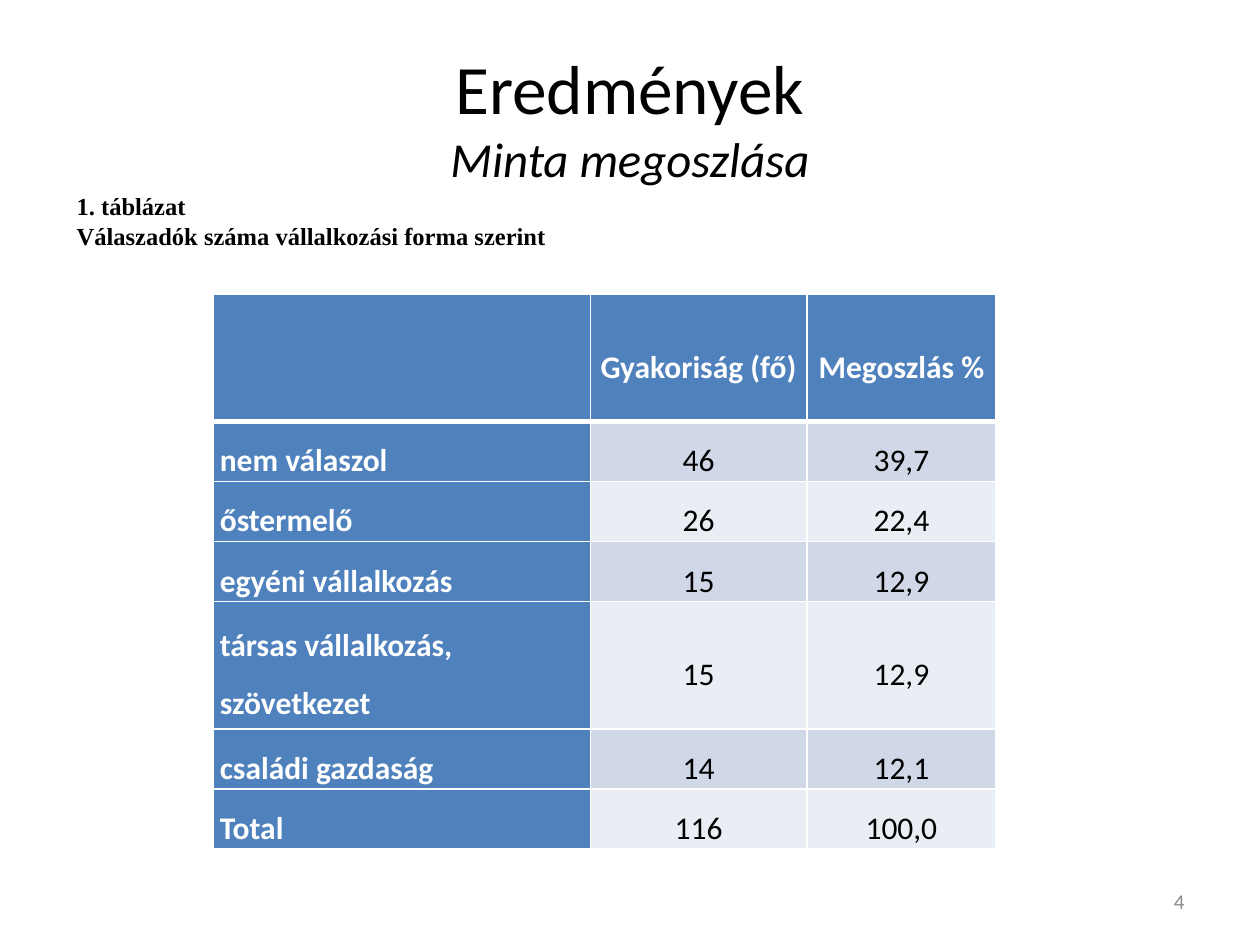
from lxml.etree import SubElement
from pptx import Presentation
from pptx.dml.color import RGBColor
from pptx.enum.text import MSO_ANCHOR, PP_ALIGN
from pptx.oxml.ns import qn
from pptx.util import Inches, Pt

WIDTH, HEIGHT = 10, 7.5
COLUMNS, ROWS = 100, 75
BLUE, BAND_DARK, BAND_LIGHT = "4F81BD", "D0D8E8", "E9EDF4"
WHITE, BLACK, GREY = "FFFFFF", "000000", "8C8C8C"


def color(hex_value):
    return RGBColor.from_string(hex_value)


def across(columns):
    return Inches(columns * WIDTH / COLUMNS)


def down(rows):
    return Inches(rows * HEIGHT / ROWS)


class SlideBuilder:
    """Holds the style and the slide; lengths are grid columns and rows."""

    font = "Calibri"

    def __init__(self, slide):
        self.slide = slide

    def style_run(self, run, size, ink, bold=False, italic=False, font=None):
        run.font.name = font or self.font
        run.font.size = Pt(size)
        run.font.bold = bold
        run.font.italic = italic
        run.font.color.rgb = color(ink)

    def text(self, place, content, styles, align=PP_ALIGN.LEFT,
             anchor=MSO_ANCHOR.MIDDLE, wrap=True):
        """Adds a text box; styles are given to the runs in order."""
        left, top, width, height = place
        frame = self.slide.shapes.add_textbox(
            across(left), down(top), across(width), down(height)).text_frame
        frame.word_wrap = wrap
        frame.vertical_anchor = anchor
        frame.text = content
        runs = []
        for paragraph in frame.paragraphs:
            paragraph.alignment = align
            runs.extend(paragraph.runs)
        for run, style in zip(runs, styles):
            self.style_run(run, **style)

    def border(self, cell, side, points):
        line = SubElement(cell._tc.get_or_add_tcPr(), qn(f"a:ln{side}"),
                          w=str(Pt(points)))
        fill = SubElement(line, qn("a:solidFill"))
        SubElement(fill, qn("a:srgbClr"), val=WHITE)

    def cell(self, cell, content, row, column):
        heading = row == 0 or column == 0
        # Borders come before the fill in the cell properties
        for side in "LRTB":
            thick = (row == 0 and side == "B") or (row == 1 and side == "T")
            self.border(cell, side, 3 if thick else 1)
        cell.fill.solid()
        band = BAND_DARK if row % 2 else BAND_LIGHT
        cell.fill.fore_color.rgb = color(BLUE if heading else band)
        cell.margin_left = cell.margin_right = Inches(0.05)
        cell.margin_top = cell.margin_bottom = 0
        cell.vertical_anchor = MSO_ANCHOR.MIDDLE
        cell.text_frame.text = content
        paragraph = cell.text_frame.paragraphs[0]
        paragraph.alignment = PP_ALIGN.CENTER if column else PP_ALIGN.LEFT
        paragraph.line_spacing = 1.5
        for run in paragraph.runs:
            self.style_run(run, 18, WHITE if heading else BLACK, bold=heading)

    def table(self, left, top, widths, heights, records):
        table = self.slide.shapes.add_table(
            len(heights), len(widths), across(left), down(top),
            across(sum(widths)), down(sum(heights))).table
        for column, width in zip(table.columns, widths):
            column.width = across(width)
        for row, height in zip(table.rows, heights):
            row.height = down(height)
        for r, record in enumerate(records):
            for c, content in enumerate(record):
                self.cell(table.cell(r, c), content, r, c)


def main():
    deck = Presentation()
    deck.slide_width, deck.slide_height = Inches(WIDTH), Inches(HEIGHT)
    builder = SlideBuilder(deck.slides.add_slide(deck.slide_layouts[6]))

    # Title with subtitle on a second line
    builder.text((5, 3, 90, 12.5), "Eredmények\vMinta megoszlása",
                 [dict(size=39.6, ink=BLACK),
                  dict(size=27.9, ink=BLACK, italic=True)],
                 align=PP_ALIGN.CENTER)

    # Distribution of respondents
    respondents = [
        ("", "Gyakoriság (fő)", "Megoszlás %"),
        ("nem válaszol", "46", "39,7"),
        ("őstermelő", "26", "22,4"),
        ("egyéni vállalkozás", "15", "12,9"),
        ("társas vállalkozás, szövetkezet", "15", "12,9"),
        ("családi gazdaság", "14", "12,1"),
        ("Total", "116", "100,0"),
    ]
    single, double = 4.77, 10.1
    heights = [double] + [single] * 3 + [double] + [single] * 2
    builder.table(16.95, 23.35, (29.9, 17.2, 15), heights, respondents)

    # Page number
    builder.text((71.7, 69.5, 23.3, 4), "4", [dict(size=12, ink=GREY)],
                 align=PP_ALIGN.RIGHT)

    # Table caption
    caption = dict(size=14, ink=BLACK, bold=True, font="Times New Roman")
    builder.text((5.1, 14.7, 39.6, 8.1),
                 "1. táblázat\nVálaszadók száma vállalkozási forma szerint",
                 [caption] * 2, anchor=MSO_ANCHOR.TOP, wrap=False)

    deck.save("out.pptx")


if __name__ == "__main__":
    main()
